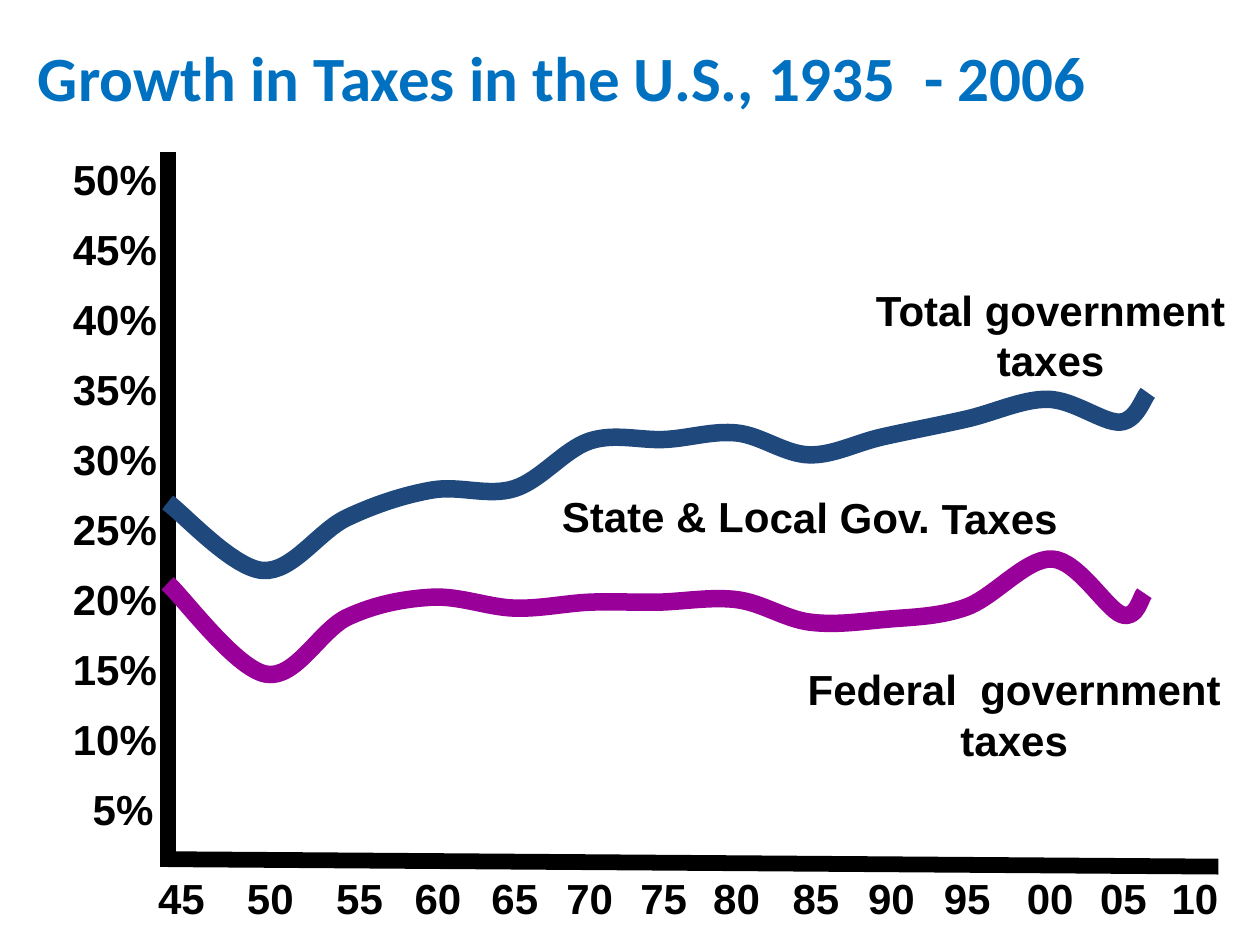
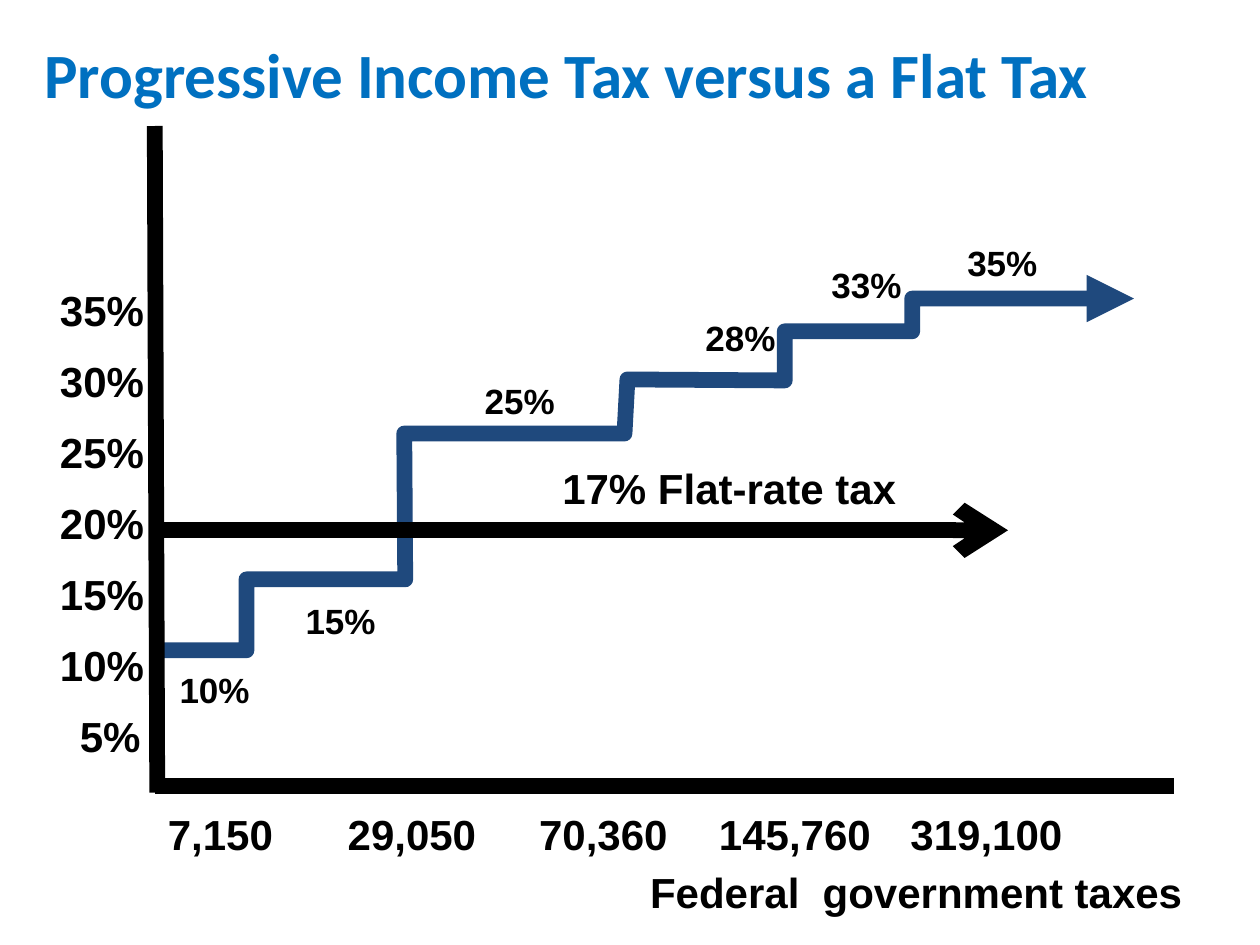
from collections import namedtuple

from lxml.etree import SubElement
from pptx import Presentation
from pptx.dml.color import RGBColor
from pptx.enum.shapes import MSO_CONNECTOR
from pptx.enum.text import MSO_ANCHOR, MSO_AUTO_SIZE, PP_ALIGN
from pptx.oxml.ns import qn
from pptx.util import Cm, Pt

Box = namedtuple("Box", "left top width height")

BLACK, WHITE, BLUE = "000000", "FFFFFF", "0070C0"
NAVY, PURPLE = "1F497D", "990099"
AXIS = 9
LABEL = 1.17

YEARS = {
    "45": 0.28, "50": 2.07, "55": 3.87, "60": 5.45, "65": 7, "70": 8.51,
    "75": 10, "80": 11.47, "85": 13.07, "90": 14.59, "95": 16.12,
    "00": 17.79, "05": 19.27, "10": 20.71,
}
TOTAL = [
    (0, 7.06), (1.91, 8.43), (3.61, 7.37), (5.33, 6.81), (6.99, 6.78),
    (8.51, 5.82), (10.03, 5.79), (11.48, 5.66), (12.93, 6.1), (14.4, 5.74),
    (16.1, 5.38), (17.75, 4.98), (19.2, 5.44), (19.76, 4.85),
]
FEDERAL = [
    (0, 8.69), (1.98, 10.52), (3.63, 9.37), (5.33, 8.97), (6.99, 9.19),
    (8.51, 9.07), (9.88, 9.07), (11.48, 9.02), (12.93, 9.47), (14.43, 9.42),
    (16.1, 9.17), (17.83, 8.2), (19.23, 9.32), (19.69, 8.89),
]
STEPS = [
    (0.15, 10.57), (1.85, 10.57), (1.85, 9.14), (5.05, 9.14), (5.03, 6.2),
    (9.47, 6.2), (9.53, 5.11), (12.7, 5.13), (12.7, 4.14), (15.27, 4.14),
    (15.27, 3.48), (19.74, 3.48),
]
RATES = [
    ("10%", 0.25, 10.82, WHITE), ("15%", 2.79, 9.42, WHITE),
    ("25%", 6.4, 4.98, None), ("28%", 10.85, 3.71, None),
    ("33%", 13.39, 2.64, None), ("35%", 16.13, 2.21, None),
]
INCOMES = ["7,150", "29,050", "70,360", "145,760", "319,100"]


def paint(hue):
    """Return the colour of a hex string."""
    return RGBColor.from_string(hue)


def style(frame, size, font="Arial", hue=BLACK, align=PP_ALIGN.LEFT):
    """Format all the text in a frame."""
    frame.word_wrap = True
    frame.vertical_anchor = MSO_ANCHOR.TOP
    for par in frame.paragraphs:
        par.alignment = align
        for run in par.runs:
            run.font.name = font
            run.font.size = Pt(size)
            run.font.bold = True
            run.font.color.rgb = paint(hue)


def label(slide, box, text, x, y, width, height=LABEL, size=24,
          align=PP_ALIGN.CENTER, fill=None):
    """Write a bold label at a place inside the box."""
    shape = slide.shapes.add_textbox(
        Cm(box.left + x), Cm(box.top + y), Cm(width), Cm(height))
    if fill:
        shape.fill.solid()
        shape.fill.fore_color.rgb = paint(fill)
    shape.text_frame.text = text
    style(shape.text_frame, size, align=align)
    return shape


def stroke(shape, hue, width, tip=None):
    """Set the line of a shape, with an arrowhead if one is named."""
    shape.line.color.rgb = paint(hue)
    shape.line.width = Pt(width)
    if tip:
        SubElement(shape.line._get_or_add_ln(), qn("a:tailEnd"), type=tip)


def rule(slide, box, start, end, tip=None):
    """Draw a straight black line inside the box."""
    line = slide.shapes.add_connector(
        MSO_CONNECTOR.STRAIGHT,
        Cm(box.left + start[0]), Cm(box.top + start[1]),
        Cm(box.left + end[0]), Cm(box.top + end[1]))
    stroke(line, BLACK, AXIS, tip)
    SubElement(line._element.spPr, qn("a:effectLst"))


def trace(slide, box, knots, hue, width, tip=None):
    """Draw an open outline through knots inside the box."""
    spots = [(Cm(box.left + x), Cm(box.top + y)) for x, y in knots]
    pen = slide.shapes.build_freeform(*spots[0])
    pen.add_line_segments(spots[1:], close=False)
    shape = pen.convert_to_shape()
    shape.fill.background()
    shape.shadow.inherit = False
    stroke(shape, hue, width, tip)
    return shape


def smooth(shape):
    """Turn the straight parts of an outline into a flowing curve."""
    root = shape._element
    spots = [(int(p.get("x")), int(p.get("y"))) for p in root.iter(qn("a:pt"))]
    ends = [spots[0], *spots, spots[-1]]
    for i, part in enumerate(list(root.iter(qn("a:lnTo")))):
        before, start, end, after = ends[i:i + 4]
        part.tag = qn("a:cubicBezTo")
        last = part[0]
        first = [s + (e - b) / 6 for b, s, e in zip(before, start, end)]
        second = [e - (a - s) / 6 for s, e, a in zip(start, end, after)]
        for x, y in (first, second):
            SubElement(part, qn("a:pt"), x=str(round(x)), y=str(round(y)))
        part.append(last)


def scale(slide, box, top, gap, high):
    """Label the upright axis in steps of five percent."""
    for i, rate in enumerate(range(high, 0, -5)):
        inset = 0.4 if rate < 10 else 0
        label(slide, box, f"{rate}%", inset - 2.16, top + i * gap, 2.9,
              align=PP_ALIGN.LEFT)


def start(deck, text, box):
    """Add a slide with its title placed in the box."""
    slide = deck.slides.add_slide(deck.slide_layouts[5])
    title = slide.shapes.title
    title.left, title.top, title.width, title.height = map(Cm, box)
    title.fill.solid()
    title.fill.fore_color.rgb = paint(WHITE)
    title.text_frame.text = text
    title.text_frame.auto_size = MSO_AUTO_SIZE.NONE
    style(title.text_frame, 36, "Calibri", BLUE)
    return slide


def growth(slide, box):
    """Draw the tax shares over the years."""
    rule(slide, box, (0, box.height - 0.15), (box.width, box.height))
    for year, mid in YEARS.items():
        label(slide, box, year, mid - 1, box.height, 2)
    scale(slide, box, -0.1, 1.41, 50)
    label(slide, box, "Total government taxes", 13.84, 2.54, 7.92, 2.11)
    label(slide, box, "Federal  government taxes", 12.47, 10.19, 9.19, 2.11)
    rule(slide, box, (0, 0), (0, box.height))
    for knots, hue in ((FEDERAL, PURPLE), (TOTAL, NAVY)):
        smooth(trace(slide, box, knots, hue, 10))
    state = label(slide, box, "State & Local Gov. Taxes", 7.7, 6.71, 10.8,
                  align=PP_ALIGN.LEFT)
    state.rotation = 0.3


def compare(slide, box):
    """Draw the stepped tax rates against the flat rate."""
    base = box.height - 0.13
    rule(slide, box, (0, base), (box.width, base))
    scale(slide, box, 3.07, 1.43, 35)
    for i, text in enumerate(INCOMES):
        label(slide, box, text, 3.86 * i - 0.58, box.height + 0.2, 3.81)
    label(slide, box, "Federal  government taxes", 9.42, box.height + 1.37,
          11.86)
    trace(slide, box, STEPS, NAVY, AXIS, "triangle")
    for text, x, y, fill in RATES:
        label(slide, box, text, x, y, 2.11, 1.02, 20, PP_ALIGN.LEFT, fill)
    rule(slide, box, (0.05, 8.15), (17.2, 8.15), "arrow")
    label(slide, box, "17% Flat-rate tax", 7.87, 6.65, 7.42)
    rule(slide, box, (0, 0), (0.05, box.height))


def main():
    """Build and save both slides."""
    deck = Presentation()
    deck.slide_width, deck.slide_height = Cm(25.4), Cm(19.05)
    slide = start(deck, "Growth in Taxes in the U.S., 1935  - 2006",
                  Box(0.51, 0.64, 23.85, 1.65))
    growth(slide, Box(3.38, 3.07, 21.18, 14.4))
    slide = start(deck, "Progressive Income Tax versus a Flat Tax",
                  Box(0.64, 0.58, 23.7, 1.8))
    compare(slide, Box(3.12, 2.54, 20.55, 13.44))
    deck.save("out.pptx")


if __name__ == "__main__":
    main()
